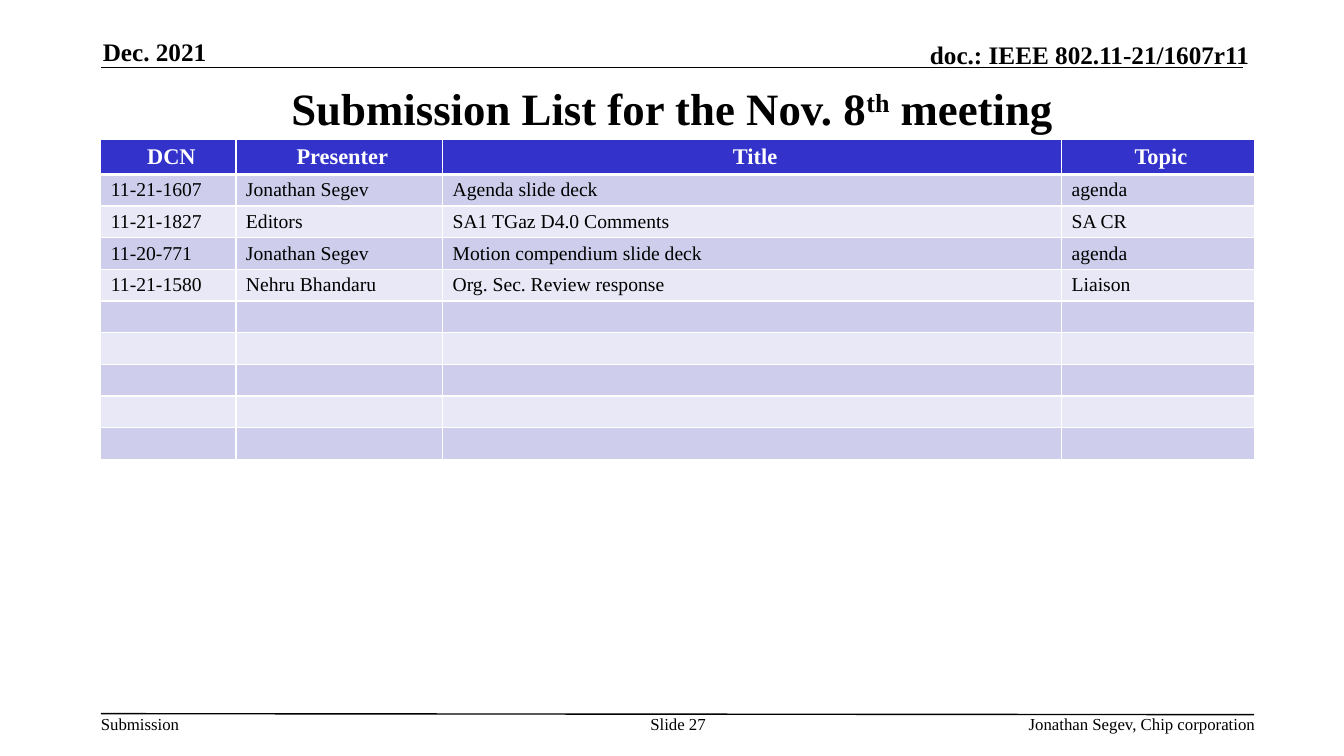
from lxml import etree
from pptx import Presentation
from pptx.dml.color import RGBColor
from pptx.enum.shapes import MSO_CONNECTOR
from pptx.enum.text import MSO_ANCHOR as ANCHOR, PP_ALIGN as ALIGN
from pptx.oxml.ns import qn
from pptx.util import Inches, Pt

BLACK, WHITE = "000000", "FFFFFF"
HEADER_FILL, BAND_FILLS = "3333CC", ("CECEEC", "E8E8F6")
COLUMN_WIDTHS = (1.34, 2.05, 6.14, 1.91)
HEADER_HEIGHT, BODY_HEIGHT, BODY_ROWS = 0.35, 2.83, 9
HEADINGS = ("DCN", "Presenter", "Title", "Topic")
SUBMISSIONS = (
    ("11-21-1607", "Jonathan Segev", "Agenda slide deck", "agenda"),
    ("11-21-1827", "Editors", "SA1 TGaz D4.0 Comments", "SA CR"),
    ("11-20-771", "Jonathan Segev", "Motion compendium slide deck", "agenda"),
    ("11-21-1580", "Nehru Bhandaru", "Org. Sec. Review response", "Liaison"),
)


def rgb(color):
    return RGBColor.from_string(color)


class SlideBuilder:
    font = "Times New Roman"

    def __init__(self, slide):
        self.shapes = slide.shapes

    def run(self, p, text, size, color=BLACK, bold=False, baseline=0):
        r = p.add_run()
        r.text = text
        r.font.name, r.font.size, r.font.bold = self.font, Pt(size), bold
        r.font.color.rgb = rgb(color)
        if baseline:
            r._r.get_or_add_rPr().set("baseline", str(baseline * 1000))

    def text(self, box, runs, size, align=ALIGN.LEFT, anchor=ANCHOR.TOP,
             bold=False, wrap=True, margin=0):
        """Add a text box; runs holds (text, baseline percent) pairs."""
        tf = self.shapes.add_textbox(*map(Inches, box)).text_frame
        tf.word_wrap, tf.vertical_anchor = wrap, anchor
        tf.margin_left = tf.margin_right = Inches(margin)
        tf.margin_top = tf.margin_bottom = Inches(margin / 2)
        p = tf.paragraphs[0]
        p.alignment = align
        for text, baseline in runs:
            self.run(p, text, size, bold=bold, baseline=baseline)

    def line(self, *ends):
        cxn = self.shapes.add_connector(MSO_CONNECTOR.STRAIGHT, *map(Inches, ends))
        cxn.line.color.rgb = rgb(BLACK)
        cxn.line.width = Pt(1)
        etree.SubElement(cxn._element.spPr, qn("a:effectLst"))

    def borders(self, cell, top, bottom):
        tcPr = cell._tc.get_or_add_tcPr()
        for side, width in (("L", 1), ("R", 1), ("T", top), ("B", bottom)):
            ln = etree.SubElement(tcPr, qn(f"a:ln{side}"), w=str(Pt(width)))
            fill = etree.SubElement(ln, qn("a:solidFill"))
            etree.SubElement(fill, qn("a:srgbClr"), val=WHITE)

    def cell(self, cell, text, row):
        header = row == 0
        size = 16 if header else 14
        cell.margin_left = Inches(0.1)
        cell.margin_right = Inches(0.04 if header else 0.1)
        cell.margin_top = cell.margin_bottom = Inches(0.04)
        cell.vertical_anchor = ANCHOR.MIDDLE
        self.borders(cell, 3 if row == 1 else 1, 3 if header else 1)
        cell.fill.solid()
        cell.fill.fore_color.rgb = rgb(HEADER_FILL if header else BAND_FILLS[(row - 1) % 2])
        p = cell.text_frame.paragraphs[0]
        p.alignment = ALIGN.CENTER if header else ALIGN.LEFT
        if text:
            self.run(p, text, size, WHITE if header else BLACK, header)
        else:
            etree.SubElement(p._p, qn("a:endParaRPr"), sz=str(size * 100))

    def table(self, left, top):
        blank = ("",) * len(HEADINGS)
        rows = (HEADINGS, *SUBMISSIONS) + (blank,) * (BODY_ROWS - len(SUBMISSIONS))
        table = self.shapes.add_table(
            len(rows), len(HEADINGS), Inches(left), Inches(top),
            Inches(sum(COLUMN_WIDTHS)), Inches(HEADER_HEIGHT + BODY_HEIGHT)).table
        for column, width in zip(table.columns, COLUMN_WIDTHS):
            column.width = Inches(width)
        for i, texts in enumerate(rows):
            table.rows[i].height = Inches(BODY_HEIGHT / BODY_ROWS if i else HEADER_HEIGHT)
            for j, text in enumerate(texts):
                self.cell(table.cell(i, j), text, i)


def main():
    prs = Presentation()
    prs.slide_width, prs.slide_height = Inches(13.33), Inches(7.5)
    page = SlideBuilder(prs.slides.add_slide(prs.slide_layouts[6]))

    page.line(1, 0.67, 12.33, 0.67)
    page.line(1, 7.08, 12.44, 7.09)
    page.text((1.02, 0.36, 2.73, 0.3), [("Dec. 2021", 0)], 18,
              anchor=ANCHOR.BOTTOM, bold=True)
    page.text((7.29, 0.39, 5.1, 0.3), [("doc.: IEEE 802.11-21/1607r11", 0)], 18,
              ALIGN.RIGHT, ANCHOR.BOTTOM, bold=True)
    page.text((1, 0.75, 11.33, 0.64),
              [("Submission List for the Nov. 8", 0), ("th", 30), (" meeting", 0)],
              32, ALIGN.CENTER, ANCHOR.MIDDLE, bold=True, margin=0.1)
    page.table(1, 1.38)
    page.text((1, 7.08, 0.79, 0.2), [("Submission", 0)], 12, wrap=False)
    page.text((6.34, 7.08, 0.77, 0.4), [("Slide 27", 0)], 12, ALIGN.CENTER)
    page.text((7.81, 7.08, 4.64, 0.2), [("Jonathan Segev, Chip corporation", 0)],
              12, ALIGN.RIGHT)
    prs.save("out.pptx")


if __name__ == "__main__":
    main()
